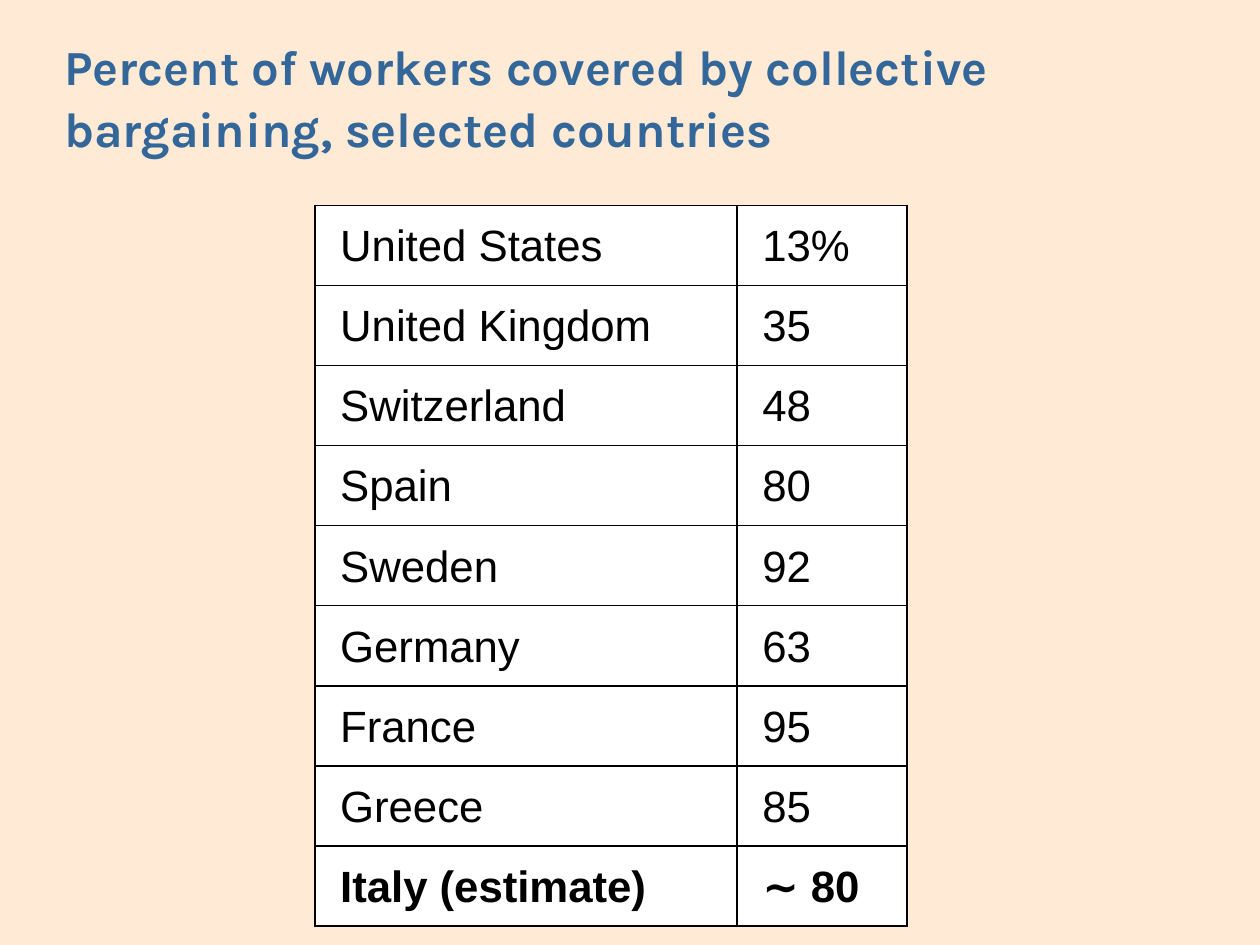
from lxml.etree import SubElement
from pptx import Presentation
from pptx.dml.color import RGBColor
from pptx.enum.text import MSO_ANCHOR, MSO_AUTO_SIZE, PP_ALIGN
from pptx.oxml.ns import qn
from pptx.util import Inches, Pt

TITLE = "Percent of workers covered by collective bargaining, selected countries"
COVERAGE = [
    ("United States", "13%"),
    ("United Kingdom", "35"),
    ("Switzerland", "48"),
    ("Spain", "80"),
    ("Sweden", "92"),
    ("Germany", "63"),
    ("France", "95"),
    ("Greece", "85"),
    ("Italy (estimate)", "∼ 80"),
]
COLUMN_WIDTHS = [3.35, 1.35]
TABLE_LEFT, TABLE_TOP, TABLE_HEIGHT = 2.5, 1.63, 5.72


def color(value):
    return RGBColor.from_string(value)


def write(frame, text, font="Arial", size=25, ink="000000", bold=False):
    para = frame.paragraphs[0]
    para.alignment = PP_ALIGN.LEFT
    para.line_spacing = 1.05
    para.space_before = Pt(0)
    span = para.add_run()
    span.text = text
    span.font.name = font
    span.font.size = Pt(size)
    span.font.bold = bold
    span.font.color.rgb = color(ink)


def add_borders(cell, ink="000000", width=1):
    properties = cell._tc.get_or_add_tcPr()
    for index, side in enumerate(("a:lnL", "a:lnR", "a:lnT", "a:lnB")):
        line = properties.makeelement(qn(side), {"w": str(Pt(width))})
        fill = SubElement(line, qn("a:solidFill"))
        SubElement(fill, qn("a:srgbClr"), val=ink)
        properties.insert(index, line)


def add_title(page):
    title = page.shapes.title
    title.left, title.top = Inches(0.51), Inches(0.24)
    title.width, title.height = Inches(9.02), Inches(1.03)
    frame = title.text_frame
    frame.margin_left = frame.margin_right = 0
    frame.margin_top = frame.margin_bottom = 0
    frame.vertical_anchor = MSO_ANCHOR.MIDDLE
    frame.word_wrap = True
    frame.auto_size = MSO_AUTO_SIZE.NONE
    write(frame, TITLE, font="Karla", size=28, ink="336699", bold=True)


def add_coverage_table(page):
    table = page.shapes.add_table(
        len(COVERAGE), len(COLUMN_WIDTHS), Inches(TABLE_LEFT), Inches(TABLE_TOP),
        Inches(sum(COLUMN_WIDTHS)), Inches(TABLE_HEIGHT),
    ).table
    table.first_row = table.horz_banding = False
    for column, width in zip(table.columns, COLUMN_WIDTHS):
        column.width = Inches(width)
    for row, entry in zip(table.rows, COVERAGE):
        row.height = Inches(TABLE_HEIGHT / len(COVERAGE))
        for cell, text in zip(row.cells, entry):
            cell.margin_left, cell.margin_right = Inches(0.2), Inches(0.1)
            cell.margin_top = cell.margin_bottom = Inches(0.05)
            cell.vertical_anchor = MSO_ANCHOR.MIDDLE
            cell.fill.solid()
            cell.fill.fore_color.rgb = color("FFFFFF")
            add_borders(cell)
            write(cell.text_frame, text, bold=entry == COVERAGE[-1])


def main():
    deck = Presentation()
    deck.slide_width, deck.slide_height = Inches(10), Inches(7.5)
    page = deck.slides.add_slide(deck.slide_layouts[5])
    page.background.fill.solid()
    page.background.fill.fore_color.rgb = color("FFEAD5")
    add_title(page)
    add_coverage_table(page)
    deck.save("out.pptx")


if __name__ == "__main__":
    main()
